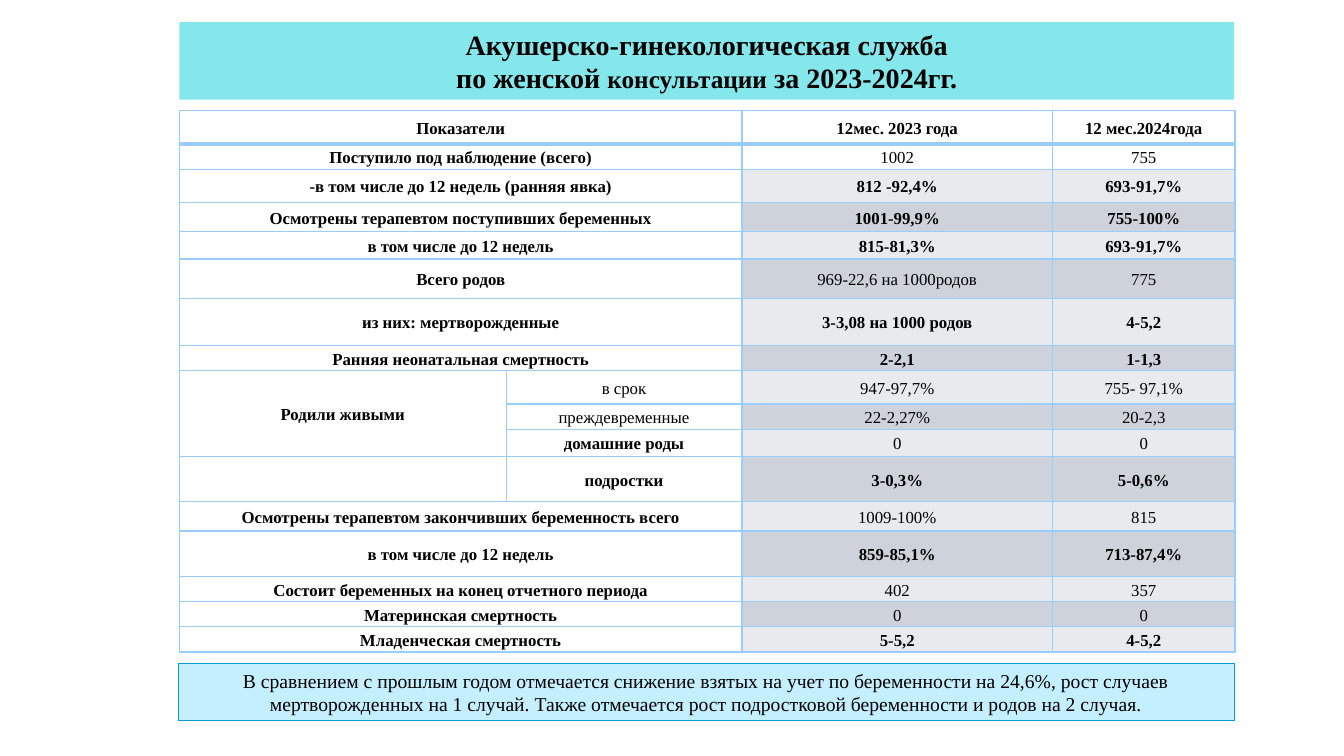
"""Build the slide on the obstetric and gynaecological service in 2023-2024."""
from lxml import etree
from pptx import Presentation
from pptx import util as u
from pptx.dml.color import RGBColor
from pptx.enum import shapes, text
from pptx.oxml import ns

PX = 9144
FONT = "Times New Roman"
COLORS = {
    "text": "000000",
    "title": "0BD0D9",
    "border": "99CCFF",
    "light": "E8EAEE",
    "dark": "CED2DA",
    "note": "C4EFFF",
    "note_line": "009DD9",
}
TITLE = [
    [("Акушерско-гинекологическая служба", None)],
    [("по женской ", None), ("консультации", 18), (" за 2023-2024гг.", None)],
]
NOTE = [[(
    "В сравнением с прошлым годом отмечается снижение взятых на учет по "
    "беременности на 24,6%, рост случаев мертворожденных на 1 случай. Также "
    "отмечается рост подростковой беременности и родов на 2 случая.", None)]]
COLUMNS = [324, 234, 308, 181]
ROWS = [
    (33, "Показатели", "", "12мес. 2023 года", "12 мес.2024года"),
    (25, "Поступило под наблюдение (всего)", "", "1002", "755"),
    (33, "-в том числе до 12 недель (ранняя явка)", "", "812 -92,4%", "693-91,7%"),
    (29, "Осмотрены терапевтом поступивших беременных", "", "1001-99,9%", "755-100%"),
    (27, "в том числе до 12 недель", "", "815-81,3%", "693-91,7%"),
    (39, "Всего родов", "", "969-22,6 на 1000родов", "775"),
    (47, "из них: мертворожденные", "", "3-3,08 на 1000 родов", "4-5,2"),
    (25, "Ранняя неонатальная смертность", "", "2-2,1", "1-1,3"),
    (33, "Родили живыми", "в срок", "947-97,7%", "755- 97,1%"),
    (25, "", "преждевременные", "22-2,27%", "20-2,3"),
    (27, "", "домашние роды", "0", "0"),
    (45, "", "подростки", "3-0,3%", "5-0,6%"),
    (29, "Осмотрены терапевтом закончивших беременность всего", "", "1009-100%", "815"),
    (45, "в том числе до 12 недель", "", "859-85,1%", "713-87,4%"),
    (25, "Состоит беременных на конец отчетного периода", "", "402", "357"),
    (25, "Материнская смертность", "", "0", "0"),
    (25, "Младенческая смертность", "", "5-5,2", "4-5,2"),
]
PLAIN_VALUE_ROWS = {1, 5, 8, 9, 10, 12, 14, 15}
PLAIN_LABELS = {"в срок", "преждевременные"}
BIRTHS_ROW = 8
BIRTHS_SPAN = 3
SPLIT_ROWS = range(BIRTHS_ROW, BIRTHS_ROW + 4)


def color(name):
    """Return the named colour."""
    return RGBColor.from_string(COLORS[name])


def format_paragraph(paragraph, size, bold):
    """Centre a paragraph and set its font."""
    paragraph.alignment = text.PP_ALIGN.CENTER
    font = paragraph.font
    font.name, font.size, font.bold = FONT, u.Pt(size), bold
    font.color.rgb = color("text")


def add_panel(slide, box, fill, lines, size, bold):
    """Place a filled rectangle with centred lines of text in the box."""
    panel = slide.shapes.add_shape(
        shapes.MSO_SHAPE.RECTANGLE, *(length * PX for length in box))
    panel.shadow.inherit = False
    panel.fill.solid()
    panel.fill.fore_color.rgb = color(fill)
    panel.line.fill.background()
    frame = panel.text_frame
    frame.word_wrap = True
    frame.auto_size = text.MSO_AUTO_SIZE.SHAPE_TO_FIT_TEXT
    for index, runs in enumerate(lines):
        paragraph = frame.add_paragraph() if index else frame.paragraphs[0]
        format_paragraph(paragraph, size, bold)
        for words, run_size in runs:
            run = paragraph.add_run()
            run.text = words
            if run_size:
                run.font.size = u.Pt(run_size)
    return panel


def add_title(slide, box):
    """Place the half-transparent title band in the box."""
    band = add_panel(slide, box, "title", TITLE, 20, True)
    fill_color = band.fill._xPr.find(".//" + ns.qn("a:srgbClr"))
    etree.SubElement(fill_color, ns.qn("a:alpha"), val="50000")


def add_note(slide, box):
    """Place the outlined conclusion in the box."""
    note = add_panel(slide, box, "note", NOTE, 14, False)
    note.line.color.rgb = color("note_line")
    note.line.width = u.Pt(0.5)


def add_borders(cell, row):
    """Draw the cell borders, thick between the header and the body."""
    properties = cell._tc.get_or_add_tcPr()
    thick = {0: "B", 1: "T"}.get(row)
    for side in "LRTB":
        width = u.Pt(3 if side == thick else 1)
        line = etree.SubElement(properties, ns.qn("a:ln" + side), w=str(width))
        fill = etree.SubElement(line, ns.qn("a:solidFill"))
        etree.SubElement(fill, ns.qn("a:srgbClr"), val=COLORS["border"])


def fill_cell(cell, row, column, words):
    """Set the text, borders and fill of one table cell."""
    cell.vertical_anchor = text.MSO_ANCHOR.MIDDLE
    cell.margin_left = cell.margin_right = PX
    cell.margin_top = cell.margin_bottom = PX
    is_value = column >= 2
    plain = row in PLAIN_VALUE_ROWS if is_value else words in PLAIN_LABELS
    paragraph = cell.text_frame.paragraphs[0]
    format_paragraph(paragraph, 12, not plain)
    paragraph.line_spacing = 1.15
    if words:
        paragraph.add_run().text = words
    add_borders(cell, row)
    if is_value and row >= 2:
        cell.fill.solid()
        cell.fill.fore_color.rgb = color("dark" if row % 2 else "light")
    else:
        cell.fill.background()


def add_indicators(slide, box):
    """Place the table of indicators in the box."""
    table = slide.shapes.add_table(
        len(ROWS), len(COLUMNS), *(length * PX for length in box)).table
    table.first_row = table.horz_banding = False
    for column, width in enumerate(COLUMNS):
        table.columns[column].width = width * PX
    for row, (height, *words) in enumerate(ROWS):
        table.rows[row].height = height * PX
        for column, cell_words in enumerate(words):
            fill_cell(table.cell(row, column), row, column, cell_words)
        if row not in SPLIT_ROWS:
            table.cell(row, 0).merge(table.cell(row, 1))
    last_birth_row = BIRTHS_ROW + BIRTHS_SPAN - 1
    table.cell(BIRTHS_ROW, 0).merge(table.cell(last_birth_row, 0))


def main():
    """Build and save the presentation."""
    presentation = Presentation()
    presentation.slide_width = 1333 * PX
    presentation.slide_height = 750 * PX
    slide = presentation.slides.add_slide(presentation.slide_layouts[6])
    add_title(slide, (178, 22, 1046, 77))
    add_indicators(slide, (178, 110, sum(COLUMNS), sum(row[0] for row in ROWS)))
    add_note(slide, (177, 658, 1047, 57))
    presentation.save("out.pptx")


if __name__ == "__main__":
    main()
